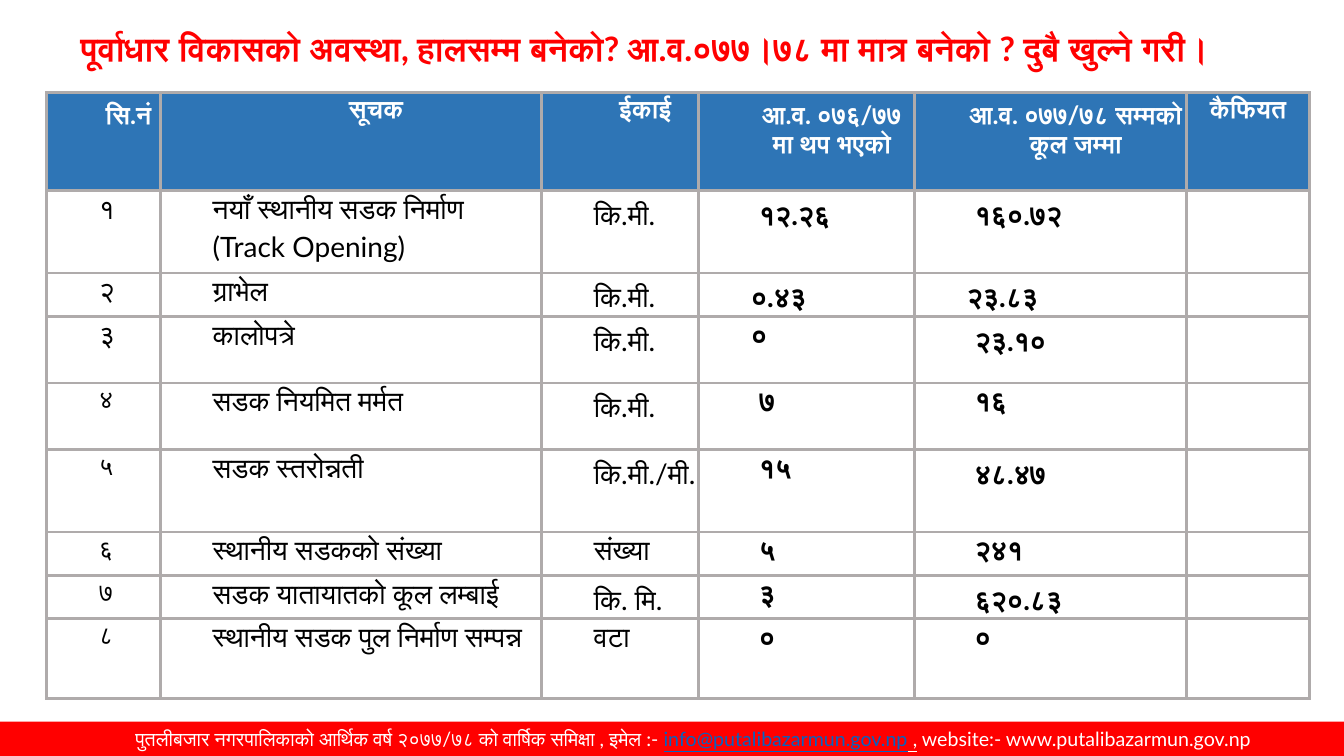
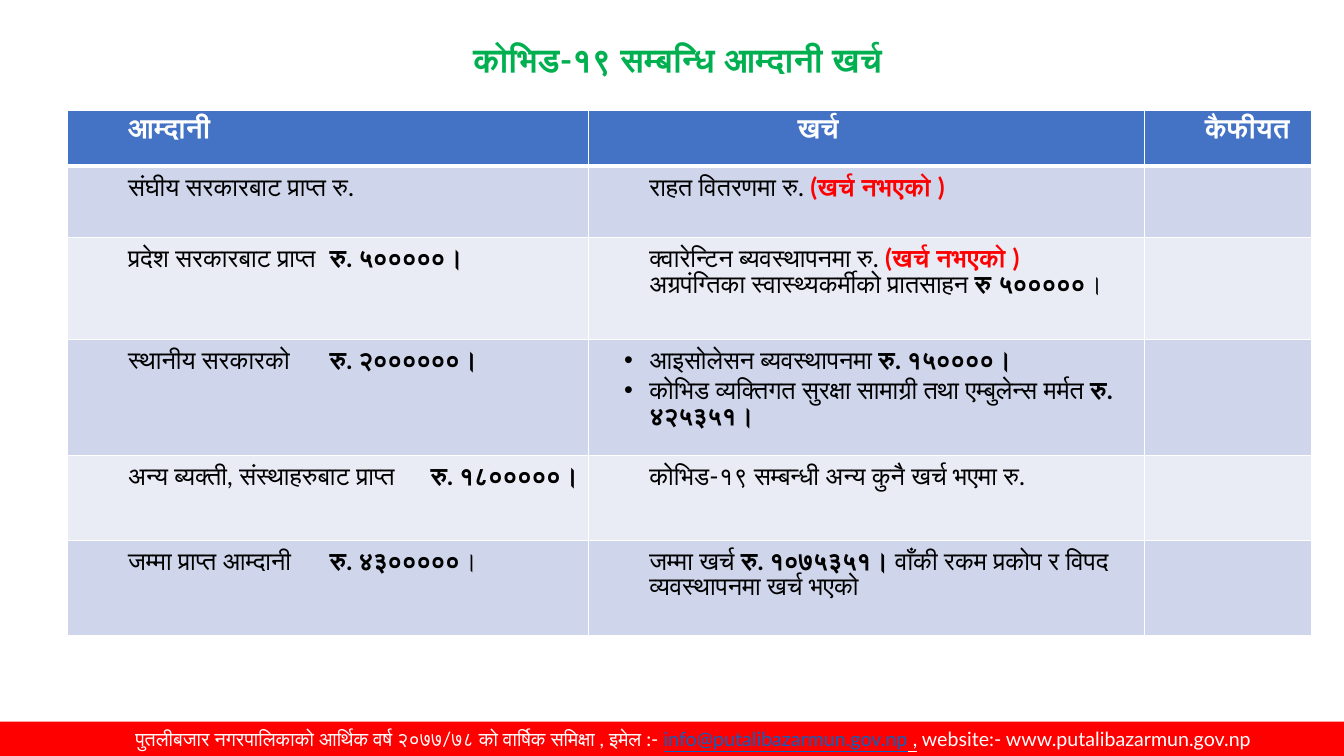
from lxml.etree import SubElement
from pptx import Presentation
from pptx.dml.color import RGBColor
from pptx.enum.shapes import MSO_SHAPE as Shape
from pptx.enum.text import MSO_ANCHOR as Anchor, PP_ALIGN as Align
from pptx.oxml.ns import qn
from pptx.util import Inches, Pt

FONT = "Lato"
WHITE, BLACK, RED, GREEN = "FFFFFF", "000000", "FF0000", "00B050"
ROAD_HEADER, ROAD_BORDER = "2E75B6", "AFABAB"
COVID_HEADER, LINK_BLUE = "4472C4", "0563C1"
COVID_BANDS = ["CFD5EA", "E9EBF5"]
INDENT = 0.5
VALUE_INDENT = 0.58

ROAD_COLUMNS = [1.13, 3.78, 1.56, 2.14, 2.7, 1.22]
ROAD_HEIGHTS = [0.97, 0.82, 0.43, 0.66, 0.66, 0.82, 0.43, 0.43, 0.79]
ROAD_ROWS = [
    ["सि.नं", "सूचक", "ईकाई", "आ.व. ०७६/७७ मा थप भएको", "आ.व. ०७७/७८ सम्मको कूल जम्मा", "कैफियत"],
    ["१", "नयाँ स्थानीय सडक निर्माण (Track Opening)", "कि.मी.", "१२.२६", "१६०.७२", ""],
    ["२", "ग्राभेल", "कि.मी.", "०.४३", "२३.८३", ""],
    ["३", "कालोपत्रे", "कि.मी.", "०", "२३.१०", ""],
    ["४", "सडक नियमित मर्मत", "कि.मी.", "७", "१६", ""],
    ["५", "सडक स्तरोन्नती", "कि.मी./मी.", "१५", "४८.४७", ""],
    ["६", "स्थानीय सडकको संख्या", "संख्या", "५", "२४१", ""],
    ["७", "सडक यातायातको कूल लम्बाई", "कि. मि.", "३", "६२०.८३", ""],
    ["८", "स्थानीय सडक पुल निर्माण सम्पन्न", "वटा", "०", "०", ""],
]
OUTDENTED_VALUES = {(2, 3), (2, 4), (3, 3)}

COVID_COLUMNS = [5.17, 5.51, 1.66]
COVID_HEIGHTS = [0.55, 0.71, 1.01, 1.15, 0.84, 0.95]
COVID_HEADINGS = [("आम्दानी", INDENT), ("खर्च", 1.97), ("कैफीयत", INDENT)]
UNSPENT = ("(खर्च नभएको )", {"bold": True, "color": RED})
STRONG = {"bold": True}
INCOMES = [
    (["संघीय सरकारबाट प्राप्त रु."], None),
    (["प्रदेश सरकारबाट प्राप्त\t", ("रु. ५०००००।", STRONG)], 2.52),
    (["स्थानीय सरकारको\t", ("रु. २००००००।", STRONG)], 2.85),
    (["अन्य ब्यक्ती, संस्थाहरुबाट प्राप्त\t", ("रु. १८०००००।", STRONG)], 3.18),
    (["जम्मा प्राप्त आम्दानी\t", ("रु. ४३०००००", STRONG), "।"], 2.46),
]
EXPENSES = [
    [["राहत वितरणमा रु. ", UNSPENT]],
    [["क्वारेन्टिन ब्यवस्थापनमा रु. ", UNSPENT],
     ["अग्रपंग्तिका स्वास्थ्यकर्मीको प्रातसाहन ", ("रु ५०००००", STRONG), "।"]],
    [["आइसोलेसन ब्यवस्थापनमा ", ("रु. १५००००।", STRONG)],
     ["कोभिड व्यक्तिगत सुरक्षा सामाग्री तथा एम्बुलेन्स मर्मत ", ("रु. ४२५३५१।", STRONG)]],
    [["कोभिड-१९ सम्बन्धी अन्य कुनै खर्च भएमा रु."]],
    [["जम्मा खर्च ", ("रु. १०७५३५१। ", STRONG),
      "वाँकी रकम प्रकोप र विपद व्यवस्थापनमा खर्च भएको"]],
]
BULLETED_EXPENSE = 2


def rgb(value):
    return RGBColor.from_string(value)


def set_indent(paragraph, left, first=0, tab=None, bullet=None):
    properties = paragraph._p.get_or_add_pPr()
    properties.set("marL", str(Inches(left)))
    properties.set("indent", str(Inches(first)))
    if bullet:
        SubElement(properties, qn("a:buFont"), typeface="Arial")
        SubElement(properties, qn("a:buChar"), char=bullet)
    if tab:
        tabs = SubElement(properties, qn("a:tabLst"))
        SubElement(tabs, qn("a:tab"), pos=str(Inches(tab)), algn="l")


def write(paragraph, parts, size, color, bold=False, align=None, spacing=None):
    font = paragraph.font
    font.name, font.size, font.bold = FONT, Pt(size), bold
    font.color.rgb = rgb(color)
    if align is not None:
        paragraph.alignment = align
    if spacing:
        paragraph.line_spacing = spacing
    for part in parts:
        text, style = (part, {}) if isinstance(part, str) else part
        run = paragraph.add_run()
        run.text = text
        if "bold" in style:
            run.font.bold = style["bold"]
        if "color" in style:
            run.font.color.rgb = rgb(style["color"])
        if "underline" in style:
            run.font.underline = style["underline"]


def add_title(slide, text, box, color, align):
    frame = slide.shapes.add_textbox(*map(Inches, box)).text_frame
    frame.word_wrap = True
    frame.vertical_anchor = Anchor.MIDDLE
    write(frame.paragraphs[0], [text], 24, color, True, align, 0.9)


def add_footer(slide):
    band = slide.shapes.add_shape(
        Shape.RECTANGLE, Inches(0), Inches(7.16), Inches(13.33), Inches(0.34))
    band.shadow.inherit = False
    band.fill.solid()
    band.fill.fore_color.rgb = rgb(RED)
    band.line.fill.background()
    frame = band.text_frame
    frame.word_wrap = True
    frame.margin_left = Inches(0.52)
    parts = [
        "पुतलीबजार नगरपालिकाको आर्थिक वर्ष २०७७/७८ को वार्षिक समिक्षा , इमेल :- ",
        ("info@putalibazarmun.gov.np", {"color": LINK_BLUE, "underline": True}),
        (" ,", {"underline": True}),
        " website:- www.putalibazarmun.gov.np",
    ]
    write(frame.paragraphs[0], parts, 14, WHITE, align=Align.CENTER)


def add_grid(slide, left, top, columns, heights):
    frame = slide.shapes.add_table(
        len(heights), len(columns), Inches(left), Inches(top),
        Inches(sum(columns)), Inches(sum(heights)))
    table = frame.table
    for column, width in zip(table.columns, columns):
        column.width = Inches(width)
    for row, height in zip(table.rows, heights):
        row.height = Inches(height)
    return table


def style_cell(cell, fill, border, width, bottom=None):
    properties = cell._tc.get_or_add_tcPr()
    for side in ("lnL", "lnR", "lnT", "lnB"):
        points = bottom if bottom and side == "lnB" else width
        line = SubElement(properties, qn(f"a:{side}"), w=str(Pt(points)))
        solid = SubElement(line, qn("a:solidFill"))
        SubElement(solid, qn("a:srgbClr"), val=border)
    if fill:
        cell.fill.solid()
        cell.fill.fore_color.rgb = rgb(fill)
    else:
        cell.fill.background()


def add_road_table(slide):
    table = add_grid(slide, 0.46, 0.92, ROAD_COLUMNS, ROAD_HEIGHTS)
    for r, texts in enumerate(ROAD_ROWS):
        header = r == 0
        for c, text in enumerate(texts):
            cell = table.cell(r, c)
            style_cell(cell, ROAD_HEADER if header else None, ROAD_BORDER, 2.25)
            cell.margin_left = cell.margin_right = Inches(0.02)
            cell.margin_top = cell.margin_bottom = Inches(0.02)
            if not text:
                continue
            paragraph = cell.text_frame.paragraphs[0]
            is_value = not header and c in (3, 4)
            if is_value and (r, c) not in OUTDENTED_VALUES:
                set_indent(paragraph, VALUE_INDENT)
            elif c < 5:
                set_indent(paragraph, INDENT)
            small = header or (c == 0 and r > 3)
            write(paragraph, [text], 18 if small else 20,
                  WHITE if header else BLACK, header or is_value,
                  Align.CENTER if header else Align.LEFT, 1.15)


def add_covid_table(slide):
    table = add_grid(slide, 0.67, 1.1, COVID_COLUMNS, COVID_HEIGHTS)
    for c, (heading, indent) in enumerate(COVID_HEADINGS):
        cell = table.cell(0, c)
        style_cell(cell, COVID_HEADER, WHITE, 1, bottom=3)
        paragraph = cell.text_frame.paragraphs[0]
        set_indent(paragraph, indent)
        write(paragraph, [heading], 20, WHITE, True)
    for r, ((income, tab), expenses) in enumerate(zip(INCOMES, EXPENSES)):
        cells = [table.cell(r + 1, c) for c in range(len(COVID_COLUMNS))]
        for cell in cells:
            style_cell(cell, COVID_BANDS[r % 2], WHITE, 1)
        paragraph = cells[0].text_frame.paragraphs[0]
        set_indent(paragraph, 0, INDENT, tab)
        write(paragraph, income, 18, BLACK)
        frame = cells[1].text_frame
        for i, expense in enumerate(expenses):
            paragraph = frame.add_paragraph() if i else frame.paragraphs[0]
            if r == BULLETED_EXPENSE:
                set_indent(paragraph, INDENT, -0.25, bullet="•")
            else:
                set_indent(paragraph, INDENT)
            write(paragraph, expense, 18, BLACK)


def main():
    deck = Presentation()
    deck.slide_width, deck.slide_height = Inches(13.33), Inches(7.5)
    blank = deck.slide_layouts[6]

    roads = deck.slides.add_slide(blank)
    add_footer(roads)
    add_title(
        roads,
        "पूर्वाधार विकासको अवस्था, हालसम्म बनेको? आ.व.०७७।७८ मा मात्र बनेको ? दुबै खुल्ने गरी।",
        (0.7, 0.17, 11.7, 0.67), RED, Align.JUSTIFY)
    add_road_table(roads)

    covid = deck.slides.add_slide(blank)
    add_footer(covid)
    add_title(covid, "कोभिड-१९ सम्बन्धि आम्दानी खर्च",
              (2.3, 0.29, 8.84, 0.65), GREEN, Align.CENTER)
    add_covid_table(covid)

    deck.save("out.pptx")


if __name__ == "__main__":
    main()
